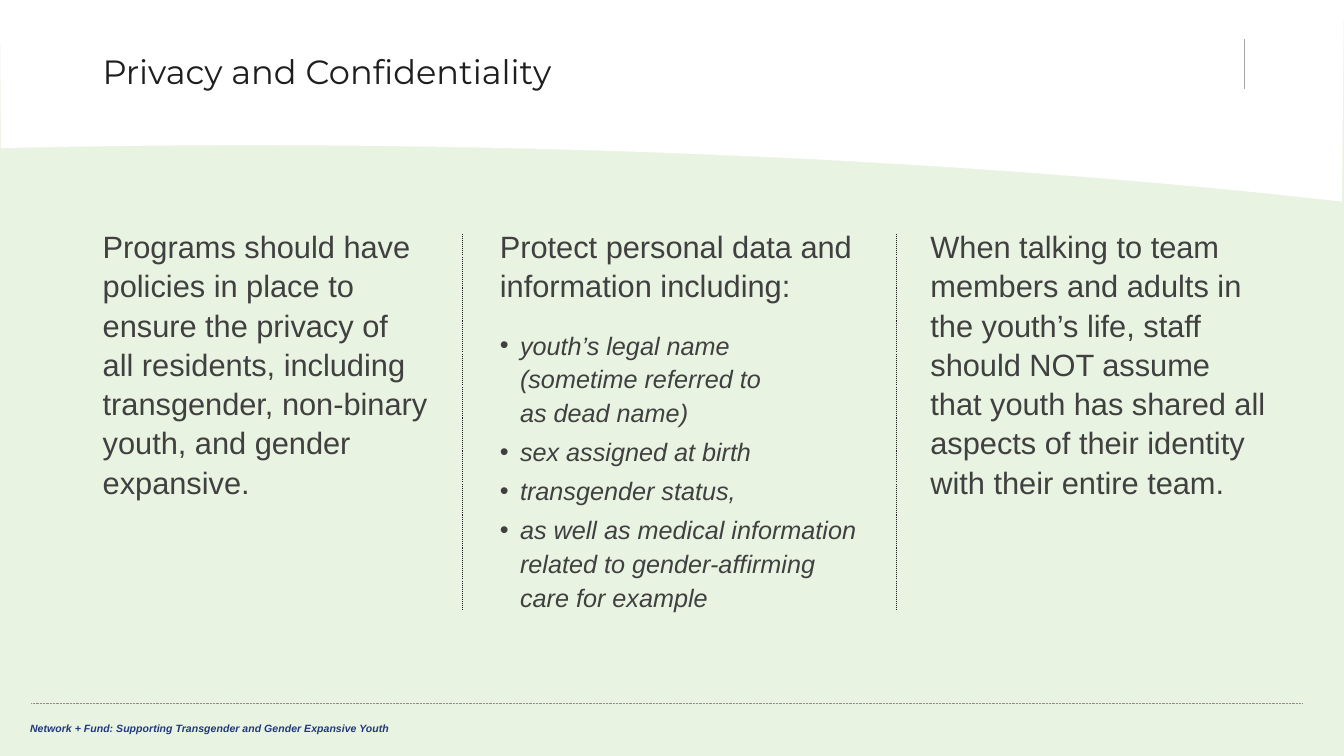
from lxml import etree
from pptx import Presentation
from pptx.dml.color import RGBColor
from pptx.enum.dml import MSO_LINE
from pptx.enum.shapes import MSO_CONNECTOR
from pptx.enum.text import MSO_ANCHOR
from pptx.oxml.ns import qn
from pptx.util import Inches, Pt

STRAIGHT = MSO_CONNECTOR.STRAIGHT
DOTTED = MSO_LINE.ROUND_DOT
TOP, MIDDLE = MSO_ANCHOR.TOP, MSO_ANCHOR.MIDDLE
WIDTH, HEIGHT = 13.33, 7.5
INK, BODY, NAVY = "1E1E1E", "404040", "21397D"

POLICY = ["Programs should have policies in place to ensure the privacy of",
          "all residents, including transgender, non-binary youth, and gender expansive."]
PROTECT = ["Protect personal data and information including:"]
PROTECTED_DATA = ["youth’s legal name\n(sometime referred to\nas dead name)",
                  "sex assigned at birth",
                  "transgender status,",
                  "as well as medical information related to gender-affirming care for example"]
TEAM = ["When talking to team members and adults in the youth’s life, staff should NOT "
        "assume that youth has shared all aspects of their identity with their entire team."]


def rgb(value):
    return RGBColor.from_string(value)


def add_line(s, x1, y1, x2, y2, color, width, dash=None):
    line = s.shapes.add_connector(STRAIGHT, Inches(x1), Inches(y1), Inches(x2), Inches(y2))
    line.line.color.rgb = rgb(color)
    line.line.width = Pt(width)
    if dash:
        line.line.dash_style = dash
    etree.SubElement(line._element.spPr, qn("a:effectLst"))


def add_box(s, x, y, w, h, anchor=TOP):
    tf = s.shapes.add_textbox(Inches(x), Inches(y), Inches(w), Inches(h)).text_frame
    tf.word_wrap = True
    tf.vertical_anchor = anchor
    return tf


def next_paragraph(tf):
    """Return the empty first paragraph, or a new one after it."""
    first = tf.paragraphs[0]
    return tf.add_paragraph() if first.runs else first


def add_text(p, text, size, color, font="Arial", bold=False, italic=False):
    for i, part in enumerate(text.split("\n")):
        if i:
            p.add_line_break()
        r = p.add_run()
        r.text = part
        r.font.name = font
        r.font.size = Pt(size)
        r.font.bold = bold
        r.font.italic = italic
        r.font.color.rgb = rgb(color)


def add_bullet(p, indent):
    pPr = p._p.get_or_add_pPr()
    pPr.set("marL", str(Inches(indent)))
    pPr.set("indent", str(-Inches(indent)))
    etree.SubElement(pPr, qn("a:buFont"), typeface="Arial")
    etree.SubElement(pPr, qn("a:buChar"), char="•")


def bezier(points, steps=48):
    """Sample a cubic curve, leaving out its start."""
    for i in range(1, steps + 1):
        t = i / steps
        weights = ((1 - t) ** 3, 3 * t * (1 - t) ** 2, 3 * t ** 2 * (1 - t), t ** 3)
        yield tuple(sum(k * pt[axis] for k, pt in zip(weights, points)) for axis in (0, 1))


def add_header(s, x, y, w, h):
    """White band with a curved lower edge, the title and a short rule."""
    right, left = (x + w - 0.02, y + h), (x + 0.01, y + 1.47)
    curve = [right, (x + 7.62, y + 1.36), (x + 2.07, y + 1.42), left]
    outline = [(x + w, y), right, *bezier(curve)]
    builder = s.shapes.build_freeform(Inches(x), Inches(y))
    builder.add_line_segments([(Inches(px), Inches(py)) for px, py in outline], close=True)
    band = builder.convert_to_shape()
    band.shadow.inherit = False
    band.fill.solid()
    band.fill.fore_color.rgb = rgb("FFFFFF")
    band.line.fill.background()

    add_line(s, x + 12.34, y + 0.88, x + 12.34, y + 0.39, "A5A5A5", 0.5)
    p = add_box(s, x + 0.92, y, 11.5, 1.46, MIDDLE).paragraphs[0]
    p.line_spacing = 0.9
    add_text(p, "Privacy and Confidentiality", 24, INK, "Montserrat")


def add_column(s, x, y, w, h, paragraphs, bullets=()):
    tf = add_box(s, x, y, w, h)
    for text in paragraphs:
        p = next_paragraph(tf)
        p.line_spacing = Pt(28)
        if bullets:
            p.space_after = Pt(12)
        add_text(p, text, 22, BODY)
    for text in bullets:
        p = next_paragraph(tf)
        p.line_spacing = Pt(24)
        p.space_before = Pt(4)
        add_bullet(p, 0.2)
        add_text(p, text, 18, BODY, italic=True)


def add_columns(s, y, h):
    add_column(s, 0.92, y, 3.52, h, POLICY)
    add_column(s, 4.86, y, 3.77, h, PROTECT, PROTECTED_DATA)
    add_column(s, 9.13, y, 3.54, h, TEAM)
    for x in (4.59, 8.89):
        add_line(s, x, y + 0.13, x, y + 3.86, INK, 0.75, DOTTED)


def add_footer(s, x, y, w):
    add_line(s, x, y, x + w, y, "8E8E8E", 0.5, DOTTED)
    p = add_box(s, x - 0.11, y + 0.13, 6.72, 0.23).paragraphs[0]
    add_text(p, "Network + Fund: Supporting Transgender and Gender Expansive Youth",
             7.5, NAVY, bold=True, italic=True)


def main():
    prs = Presentation()
    prs.slide_width, prs.slide_height = Inches(WIDTH), Inches(HEIGHT)
    s = prs.slides.add_slide(prs.slide_layouts[6])
    s.background.fill.solid()
    s.background.fill.fore_color.rgb = rgb("E9F3E2")
    add_header(s, 0, 0, WIDTH, 2)
    add_columns(s, 2.19, 4.49)
    add_footer(s, 0.31, 6.98, 12.6)
    prs.save("out.pptx")


if __name__ == "__main__":
    main()
